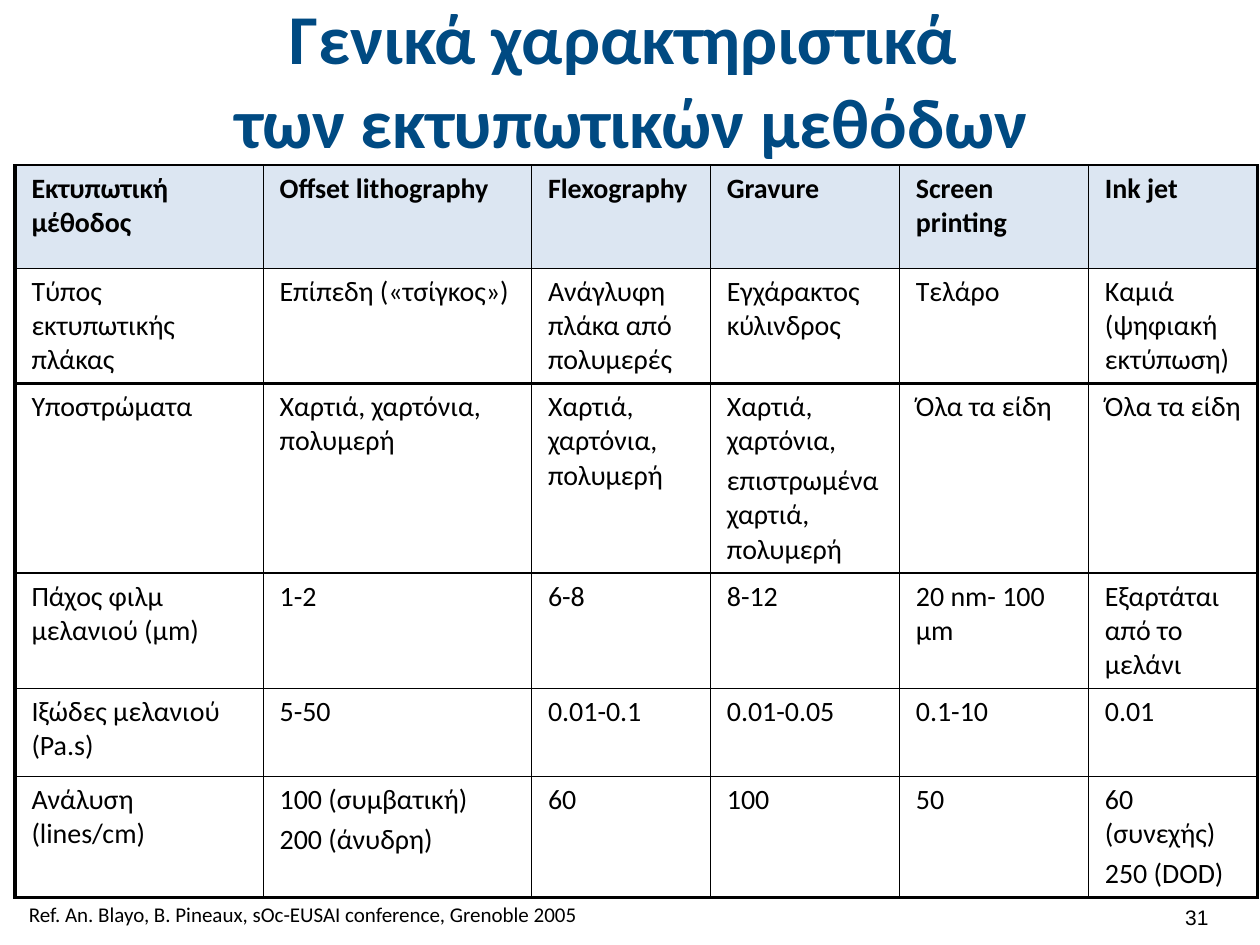
from lxml import etree
from pptx import Presentation
from pptx.dml.color import RGBColor
from pptx.enum import text
from pptx.oxml import ns
from pptx.util import Inches, Pt

INK = "000000"
COLS = [1.97, 2.13, 1.42, 1.5, 1.5, 1.34]
HEIGHTS = [0.82, 0.9, 1.49, 0.9, 0.7, 0.95]
ROWS = [
    ["Εκτυπωτική μέθοδος", "Offset lithography", "Flexography", "Gravure",
     "Screen printing", "Ink jet"],
    ["Τύπος εκτυπωτικής πλάκας", "Επίπεδη («τσίγκος»)",
     "Ανάγλυφη πλάκα από πολυμερές", "Εγχάρακτος κύλινδρος", "Τελάρο",
     "Καμιά (ψηφιακή εκτύπωση)"],
    ["Υποστρώματα", "Χαρτιά, χαρτόνια, πολυμερή", "Χαρτιά, χαρτόνια, πολυμερή",
     "Χαρτιά, χαρτόνια,\nεπιστρωμένα χαρτιά, πολυμερή", "Όλα τα είδη",
     "Όλα τα είδη"],
    ["Πάχος φιλμ μελανιού (μm)", "1-2", "6-8", "8-12", "20 nm- 100 μm",
     "Εξαρτάται από το μελάνι"],
    ["Ιξώδες μελανιού (Pa.s)", "5-50", "0.01-0.1", "0.01-0.05", "0.1-10", "0.01"],
    ["Ανάλυση (lines/cm)", "100 (συμβατική)\n200 (άνυδρη)", "60", "100", "50",
     "60 (συνεχής)\n250 (DOD)"],
]


def paint(hue):
    return RGBColor.from_string(hue)


def add_run(para, words, size, hue=INK, bold=False, face="Calibri"):
    run = para.add_run()
    run.text = words
    font = run.font
    font.name, font.size, font.bold = face, Pt(size), bold
    font.color.rgb = paint(hue)


def add_title(slide):
    title = slide.shapes.title
    title.left, title.top = Inches(0.51), Inches(0.13)
    title.width, title.height = Inches(9), Inches(0.99)
    frame = title.text_frame
    frame.auto_size = text.MSO_AUTO_SIZE.NONE
    frame.vertical_anchor = text.MSO_ANCHOR.MIDDLE
    para = frame.paragraphs[0]
    para.alignment = text.PP_ALIGN.CENTER
    add_run(para, "Γενικά χαρακτηριστικά ", 40, "004A82", True)
    para.add_line_break()
    add_run(para, "των εκτυπωτικών μεθόδων", 40, "004A82", True)


def add_edge(cell, side, width):
    props = cell._tc.get_or_add_tcPr()
    line = etree.SubElement(props, ns.qn(f"a:ln{side}"), w=str(Pt(width)))
    fill = etree.SubElement(line, ns.qn("a:solidFill"))
    etree.SubElement(fill, ns.qn("a:srgbClr"), val=INK)


def fill_cell(cell, words, row, col):
    cell.margin_left = cell.margin_right = Inches(0.13)
    cell.margin_top = cell.margin_bottom = Inches(0.05)
    thick = {"L": col == 0, "R": col == len(COLS) - 1,
             "T": row == 2, "B": row in (1, len(ROWS) - 1)}
    for side, heavy in thick.items():
        add_edge(cell, side, 2.25 if heavy else 1)
    if row == 0:
        cell.fill.solid()
        cell.fill.fore_color.rgb = paint("DCE6F2")
    else:
        cell.fill.background()
    frame = cell.text_frame
    for i, part in enumerate(words.split("\n")):
        para = frame.add_paragraph() if i else frame.paragraphs[0]
        if i:
            para.space_before = Pt(3.2)
        add_run(para, part, 16, bold=row == 0)


def add_grid(slide):
    grid = slide.shapes.add_table(
        len(ROWS), len(COLS), Inches(0.12), Inches(1.31),
        Inches(sum(COLS)), Inches(sum(HEIGHTS))).table
    grid.horz_banding = grid.first_row = False
    for col, width in zip(grid.columns, COLS):
        col.width = Inches(width)
    for row, height in zip(grid.rows, HEIGHTS):
        row.height = Inches(height)
    for r, row in enumerate(ROWS):
        for c, words in enumerate(row):
            fill_cell(grid.cell(r, c), words, r, c)


def add_note(slide, words, box, align, anchor, wrap, face="Calibri"):
    frame = slide.shapes.add_textbox(*map(Inches, box)).text_frame
    frame.word_wrap = wrap
    frame.vertical_anchor = anchor
    para = frame.paragraphs[0]
    para.alignment = align
    add_run(para, words, 12, face=face)


def main():
    deck = Presentation()
    deck.slide_width, deck.slide_height = Inches(10), Inches(7.5)
    slide = deck.slides.add_slide(deck.slide_layouts[5])
    add_title(slide)
    add_grid(slide)
    add_note(slide, "Ref. An. Blayo, B. Pineaux, sOc-EUSAI conference, Grenoble 2005",
             (0.12, 7.11, 4.57, 0.3), text.PP_ALIGN.CENTER,
             text.MSO_ANCHOR.TOP, False)
    add_note(slide, "31", (7.36, 7.08, 2.33, 0.4), text.PP_ALIGN.RIGHT,
             text.MSO_ANCHOR.MIDDLE, True, "Arial")
    deck.save("out.pptx")


if __name__ == "__main__":
    main()
